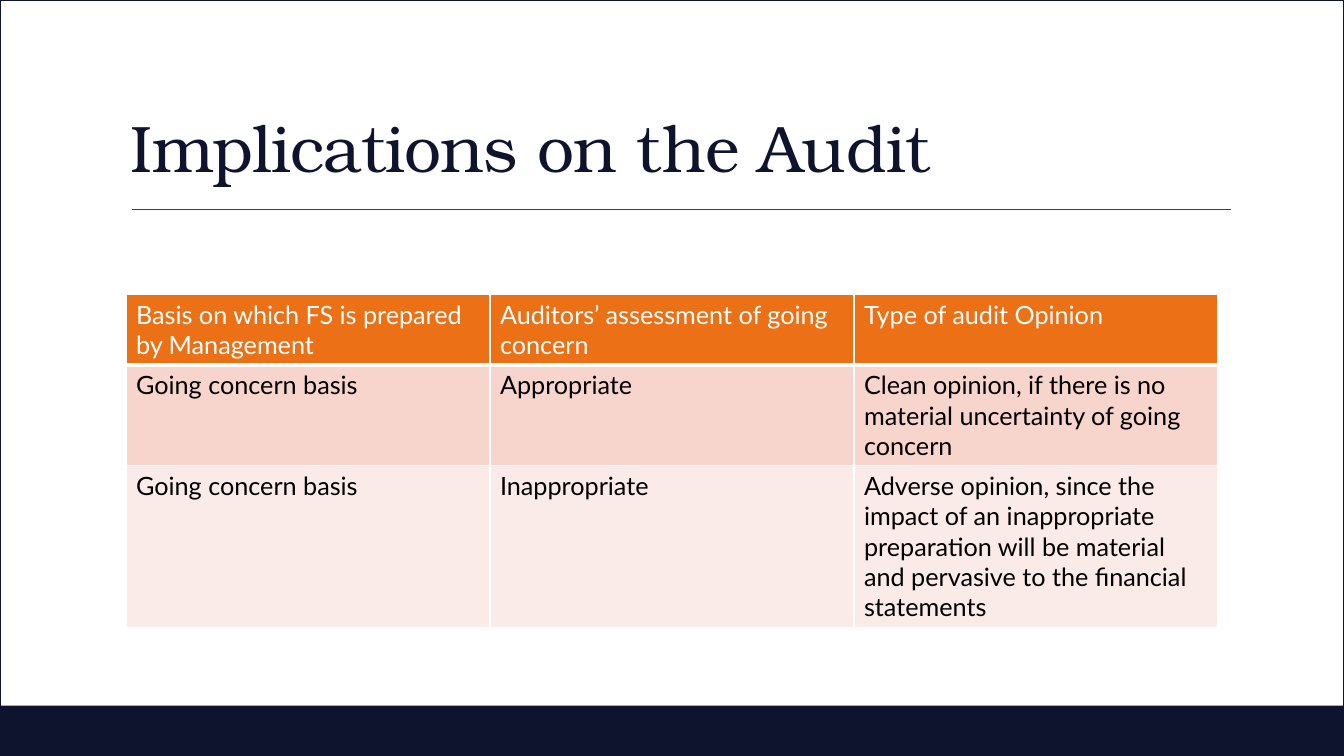
from dataclasses import dataclass

from lxml.etree import SubElement
from pptx import Presentation
from pptx.dml.color import RGBColor
from pptx.enum.shapes import MSO_CONNECTOR, MSO_SHAPE
from pptx.enum.text import MSO_ANCHOR
from pptx.oxml import parse_xml
from pptx.oxml.ns import nsdecls, qn
from pptx.util import Inches, Pt


@dataclass(frozen=True)
class Theme:
    navy: str = "0E142E"
    rule: str = "404040"
    white: str = "FFFFFF"
    black: str = "000000"
    header: str = "EC7016"
    bands: tuple = ("F8D5CC", "FBEBE8")
    title_font: str = "TeX Gyre Bonum"
    body_font: str = "Lato"
    title_size: int = 47
    body_size: int = 18
    line_width: int = 1
    header_line_width: int = 3


THEME = Theme()
ROW_HEIGHTS = (0.7, 1.0, 1.6)
OPINION_ROWS = (
    ("Basis on which FS is prepared by Management",
     "Auditors’ assessment of going concern",
     "Type of audit Opinion"),
    ("Going concern basis", "Appropriate",
     "Clean opinion, if there is no material uncertainty of going concern"),
    ("Going concern basis", "Inappropriate",
     "Adverse opinion, since the impact of an inappropriate preparation "
     "will be material and pervasive to the financial statements"),
)


def style_font(font, name, size, color):
    font.name = name
    font.size = Pt(size)
    font.bold = False
    font.color.rgb = RGBColor.from_string(color)


def add_rectangle(slide, left, top, width, height, fill=None, line=None):
    shape = slide.shapes.add_shape(
        MSO_SHAPE.RECTANGLE, Inches(left), Inches(top), Inches(width), Inches(height))
    shape.shadow.inherit = False
    if fill:
        shape.fill.solid()
        shape.fill.fore_color.rgb = RGBColor.from_string(fill)
    else:
        shape.fill.background()
    if line:
        shape.line.color.rgb = RGBColor.from_string(line)
        shape.line.width = Pt(THEME.line_width)
    else:
        shape.line.fill.background()


def add_rule(slide, left, right, top):
    connector = slide.shapes.add_connector(
        MSO_CONNECTOR.STRAIGHT, Inches(left), Inches(top), Inches(right), Inches(top))
    connector.line.color.rgb = RGBColor.from_string(THEME.rule)
    connector.line.width = Pt(THEME.line_width)
    SubElement(connector._element.spPr, qn("a:effectLst"))


def add_title(slide, text, left, top, width, height):
    text_box = slide.shapes.add_textbox(
        Inches(left), Inches(top), Inches(width), Inches(height))
    frame = text_box.text_frame
    frame.word_wrap = True
    frame.vertical_anchor = MSO_ANCHOR.BOTTOM
    paragraph = frame.paragraphs[0]
    paragraph.line_spacing = 0.9
    run = paragraph.add_run()
    run.text = text
    style_font(paragraph.font, THEME.title_font, THEME.title_size, THEME.navy)
    run._r.get_or_add_rPr().set("spc", "-50")


def set_borders(cell, bottom_width):
    widths = {"L": THEME.line_width, "R": THEME.line_width,
              "T": THEME.line_width, "B": bottom_width}
    properties = cell._tc.get_or_add_tcPr()
    for index, (side, width) in enumerate(widths.items()):
        border = parse_xml(
            f'<a:ln{side} {nsdecls("a")} w="{Pt(width)}"><a:solidFill>'
            f'<a:srgbClr val="{THEME.white}"/></a:solidFill></a:ln{side}>')
        properties.insert(index, border)


def fill_cell(cell, text, fill, color, bottom_width):
    cell.text = text
    style_font(cell.text_frame.paragraphs[0].font,
               THEME.body_font, THEME.body_size, color)
    cell.fill.solid()
    cell.fill.fore_color.rgb = RGBColor.from_string(fill)
    set_borders(cell, bottom_width)


def add_opinion_table(slide, left, top, width):
    table = slide.shapes.add_table(
        len(OPINION_ROWS), len(OPINION_ROWS[0]), Inches(left), Inches(top),
        Inches(width), Inches(sum(ROW_HEIGHTS))).table
    table.horz_banding = False
    for row_index, texts in enumerate(OPINION_ROWS):
        table.rows[row_index].height = Inches(ROW_HEIGHTS[row_index])
        if row_index == 0:
            look = (THEME.header, THEME.white, THEME.header_line_width)
        else:
            band = THEME.bands[(row_index - 1) % len(THEME.bands)]
            look = (band, THEME.black, THEME.line_width)
        for column_index, text in enumerate(texts):
            fill_cell(table.cell(row_index, column_index), text, *look)


def main():
    presentation = Presentation()
    presentation.slide_width = Inches(13.33)
    presentation.slide_height = Inches(7.5)
    slide = presentation.slides.add_slide(presentation.slide_layouts[6])
    add_rectangle(slide, 0, 7, 13.33, 0.5, fill=THEME.navy)
    add_rule(slide, 1.31, 12.21, 2.08)
    add_rectangle(slide, 0, 0, 13.33, 7.5, line=THEME.navy)
    add_title(slide, "Implications on the Audit", 1.2, 0.31, 11, 1.59)
    add_opinion_table(slide, 1.25, 2.92, 10.83)
    presentation.save("out.pptx")


if __name__ == "__main__":
    main()
